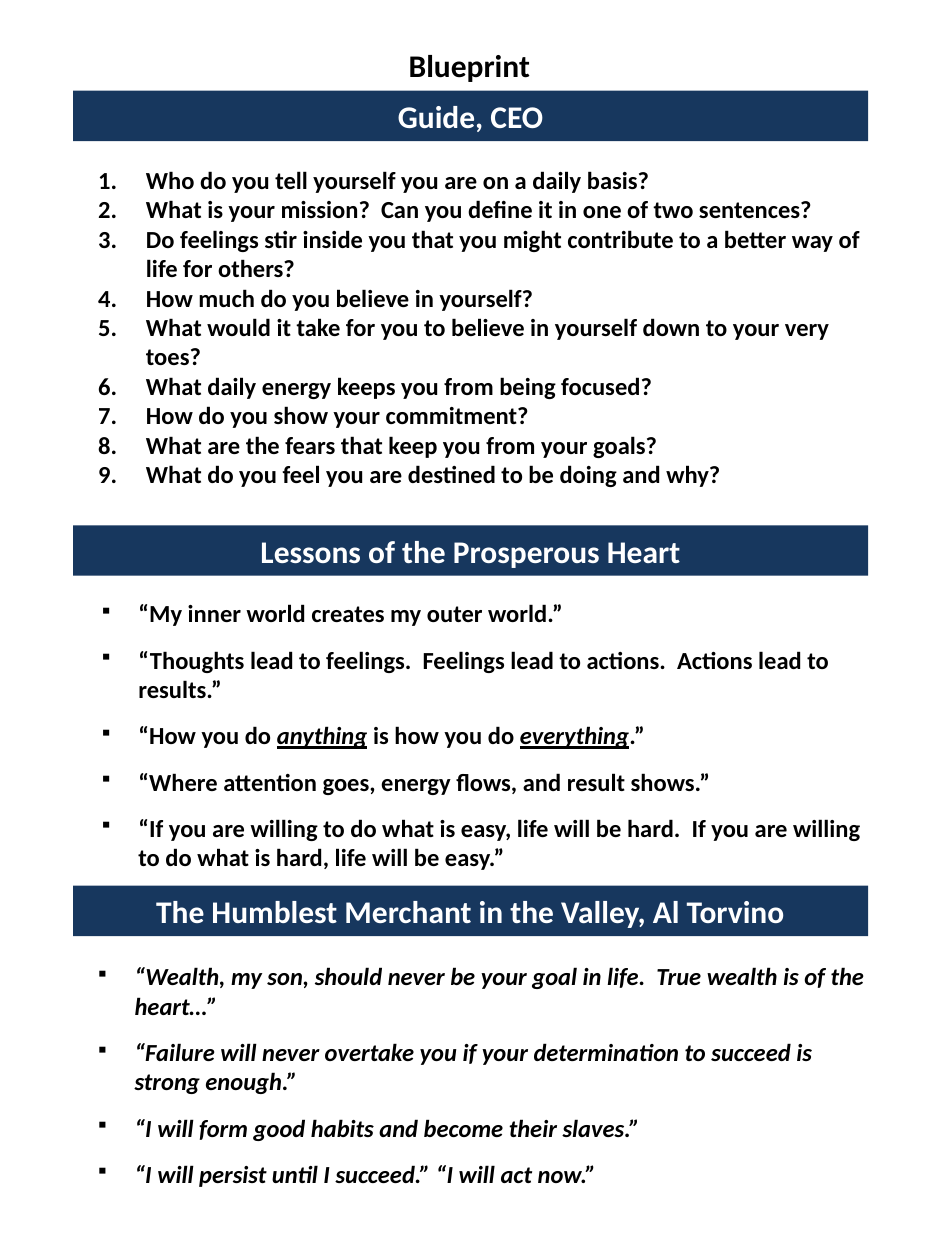
from lxml import etree
from pptx import Presentation
from pptx.dml.color import RGBColor
from pptx.enum.shapes import MSO_SHAPE
from pptx.enum.text import MSO_ANCHOR, PP_ALIGN
from pptx.oxml.ns import qn
from pptx.util import Inches, Pt

RECTANGLE = MSO_SHAPE.RECTANGLE
LEFT, CENTER = PP_ALIGN.LEFT, PP_ALIGN.CENTER
TOP, MIDDLE = MSO_ANCHOR.TOP, MSO_ANCHOR.MIDDLE
COLORS = {"navy": "17375E", "white": "FFFFFF", "black": "000000"}
FONT = "Calibri"

deck = Presentation()
deck.slide_width, deck.slide_height = Inches(7.5), Inches(10)
page = deck.slides.add_slide(deck.slide_layouts[6])

# Lengths are hundredths of the slide's width and height
COLUMN, ROW = deck.slide_width / 100, deck.slide_height / 100


def place(left, top, width, height):
    return [round(n) for n in (left * COLUMN, top * ROW, width * COLUMN, height * ROW)]


def write(box, lines, size=14, color="black", align=LEFT, anchor=TOP,
          italic=False, marker=(), indent=0, gap=0):
    """Write one paragraph per line; words between underscores are stressed."""
    frame = box.text_frame
    frame.word_wrap = True
    frame.vertical_anchor = anchor
    for number, line in enumerate(lines):
        para = frame.paragraphs[0] if number == 0 else frame.add_paragraph()
        para.alignment = align
        para.space_before = Pt(gap if number else 0)
        if marker:
            properties = para._p.get_or_add_pPr()
            properties.set("marL", str(Inches(indent)))
            properties.set("indent", str(-Inches(indent)))
            for tag, attribute, value in marker:
                etree.SubElement(properties, qn(tag)).set(attribute, value)
        for index, words in enumerate(line.split("_")):
            stressed = index % 2 == 1
            span = para.add_run()
            span.text = words
            span.font.name, span.font.size = FONT, Pt(size)
            span.font.bold = True
            span.font.italic = italic or stressed
            span.font.underline = stressed
            span.font.color.rgb = RGBColor.from_string(COLORS[color])


NUMBERS = {"marker": [("a:buAutoNum", "type", "arabicPeriod")], "indent": 0.38}
SQUARES = {"marker": [("a:buSzPct", "val", "75000"), ("a:buChar", "char", "▪")],
           "indent": 0.31, "gap": 9.6}

# Page title
title = page.shapes.add_textbox(*place(34.67, 3.2, 30, 4))
write(title, ["Blueprint"], size=18, align=CENTER)

# Sections: heading, top of its bar, place of its list, list format, lines
sections = [
    ("Guide, CEO", 7.2, (9.07, 12.6, 83.73, 26.9), NUMBERS, [
        "Who do you tell yourself you are on a daily basis?",
        "What is your mission?  Can you define it in one of two sentences?",
        "Do feelings stir inside you that you might contribute to a better way of life for others?",
        "How much do you believe in yourself?",
        "What would it take for you to believe in yourself down to your very toes?",
        "What daily energy keeps you from being focused?",
        "How do you show your commitment?",
        "What are the fears that keep you from your goals?",
        "What do you feel you are destined to be doing and why?",
    ]),
    ("Lessons of the Prosperous Heart", 41.7, (9.2, 47, 83.47, 22.9), SQUARES, [
        "“My inner world creates my outer world.”",
        "“Thoughts lead to feelings.  Feelings lead to actions.  Actions lead to results.”",
        "“How you do _anything_ is how you do _everything_.”",
        "“Where attention goes, energy flows, and result shows.”",
        "“If you are willing to do what is easy, life will be hard.  "
        "If you are willing to do what is hard, life will be easy.”",
    ]),
    ("The Humblest Merchant in the Valley, Al Torvino", 70.3,
     (8.8, 75.8, 84.27, 19.2), {**SQUARES, "italic": True}, [
         "“Wealth, my son, should never be your goal in life.  True wealth is of the heart…”",
         "“Failure will never overtake you if your determination to succeed is strong enough.”",
         "“I will form good habits and become their slaves.”",
         "“I will persist until I succeed.” “I will act now.”",
     ]),
]

for heading, bar_top, list_place, list_format, lines in sections:
    # Heading bar
    bar = page.shapes.add_shape(RECTANGLE, *place(7.73, bar_top, 84.13, 4))
    bar.shadow.inherit = False
    bar.fill.solid()
    bar.fill.fore_color.rgb = RGBColor.from_string(COLORS["navy"])
    bar.line.fill.background()
    write(bar, [heading], size=18, color="white", align=CENTER, anchor=MIDDLE)

    # List under the bar
    write(page.shapes.add_textbox(*place(*list_place)), lines, **list_format)

deck.save("out.pptx")
